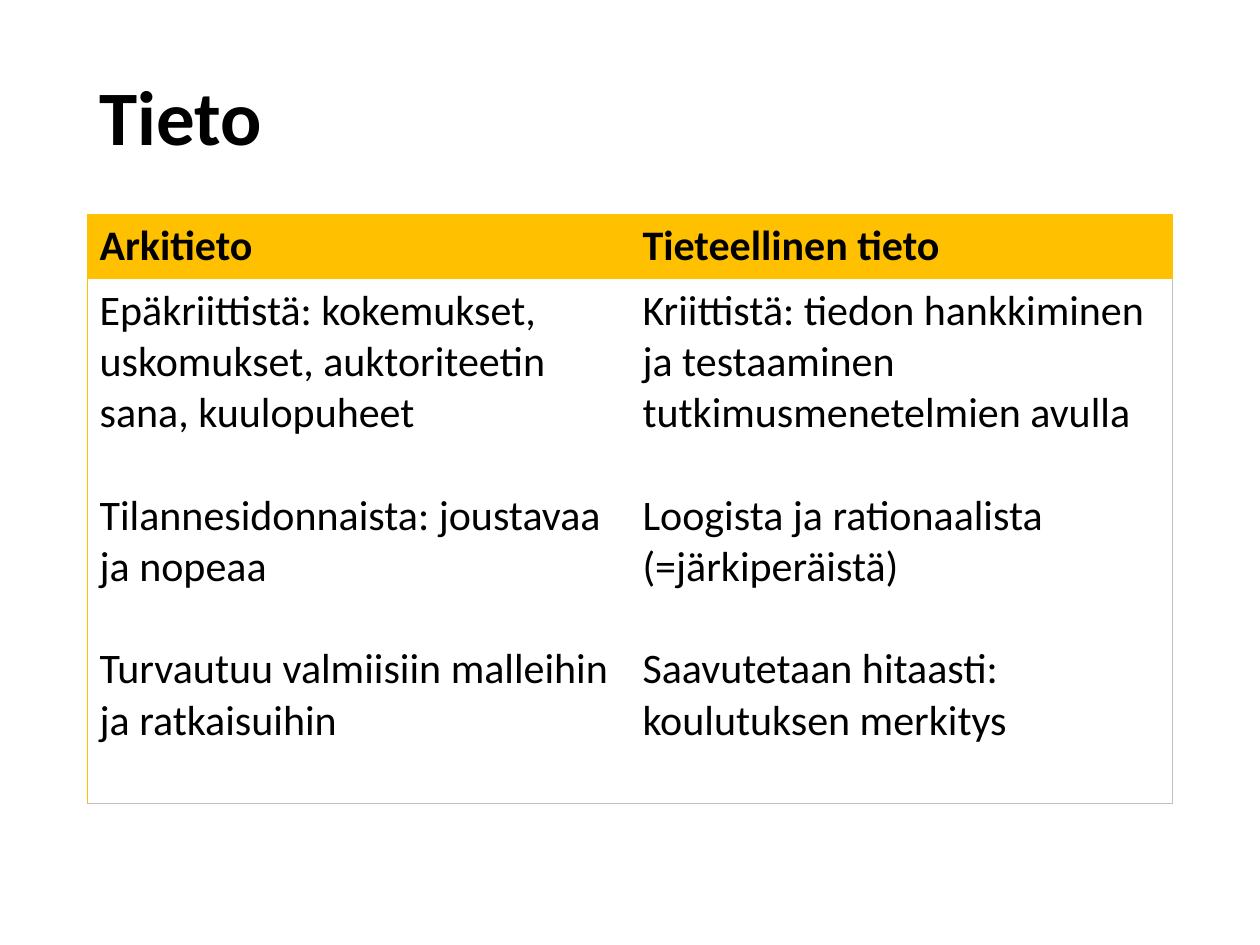
import pptx
import pptx.dml.color
import pptx.enum.text
import pptx.oxml
import pptx.oxml.ns
import pptx.util

PX = 914400 // 126
FONT = "Calibri"
COLORS = {"text": "000000", "header": "FFC000", "body": "FFFFFF", "edge": "BFBFBF"}
LINE_GAP = 29.3  # one line of 24 pt text

# Each paragraph is its wording and whether a line's gap precedes it
EVERYDAY = [
    ("Epäkriittistä: kokemukset, uskomukset, auktoriteetin sana, kuulopuheet", False),
    ("Tilannesidonnaista: joustavaa ja nopeaa", True),
    ("Turvautuu valmiisiin malleihin ja ratkaisuihin", True),
]
SCIENTIFIC = [
    ("Kriittistä: tiedon hankkiminen ja testaaminen tutkimusmenetelmien avulla", False),
    ("Loogista ja rationaalista (=järkiperäistä)", True),
    ("Saavutetaan hitaasti:", True),
    ("koulutuksen merkitys", False),
]
ROWS = [
    [[("Arkitieto", False)], [("Tieteellinen tieto", False)]],
    [EVERYDAY, SCIENTIFIC],
]


def rgb(name):
    return pptx.dml.color.RGBColor.from_string(COLORS[name])


def emu(*lengths):
    return [length * PX for length in lengths]


def format_runs(paragraph, size, bold):
    for run in paragraph.runs:
        run.font.name = FONT
        run.font.size = pptx.util.Pt(size)
        run.font.bold = bold
        run.font.color.rgb = rgb("text")


def set_borders(cell, edges):
    """Draw the named edges; hide those whose colour is None."""
    properties = cell._tc.get_or_add_tcPr()
    for position, side in enumerate("LRTB"):
        color = edges[side]
        paint = (f'<a:solidFill><a:srgbClr val="{COLORS[color]}"/></a:solidFill>'
                 if color else "<a:noFill/>")
        properties.insert(position, pptx.oxml.parse_xml(
            f'<a:ln{side} {pptx.oxml.ns.nsdecls("a")} w="6350">{paint}</a:ln{side}>'))


def add_title(slide, left, top, width, height):
    frame = slide.shapes.add_textbox(*emu(left, top, width, height)).text_frame
    frame.word_wrap = True
    frame.vertical_anchor = pptx.enum.text.MSO_ANCHOR.MIDDLE
    frame.text = "Tieto"
    frame.paragraphs[0].line_spacing = 0.9
    format_runs(frame.paragraphs[0], 44, True)


def fill_cell(cell, paragraphs, is_header):
    cell.fill.solid()
    cell.fill.fore_color.rgb = rgb("header" if is_header else "body")
    cell.text_frame.text = "\n".join(wording for wording, _ in paragraphs)
    for paragraph, (_, has_gap) in zip(cell.text_frame.paragraphs, paragraphs):
        if has_gap:
            paragraph.space_before = pptx.util.Pt(LINE_GAP)
        format_runs(paragraph, 24, is_header)


def add_comparison(slide, left, top, width, height, header_height):
    table = slide.shapes.add_table(2, 2, *emu(left, top, width, height)).table
    table.first_row = table.horz_banding = False
    table.rows[0].height, table.rows[1].height = emu(header_height, height - header_height)
    for row, contents in enumerate(ROWS):
        is_header = row == 0
        for column, paragraphs in enumerate(contents):
            cell = table.cell(row, column)
            fill_cell(cell, paragraphs, is_header)
            set_borders(cell, {
                "L": "header" if column == 0 else None,
                "R": ("header" if is_header else "edge") if column == 1 else None,
                "T": "header" if is_header else None,
                "B": None if is_header else "edge",
            })


def main():
    presentation = pptx.Presentation()
    presentation.slide_width, presentation.slide_height = emu(1260, 945)
    slide = presentation.slides.add_slide(presentation.slide_layouts[6])
    add_title(slide, 87, 29, 1086, 183)
    add_comparison(slide, 87, 214, 1086, 589, header_height=65)
    presentation.save("out.pptx")


if __name__ == "__main__":
    main()
